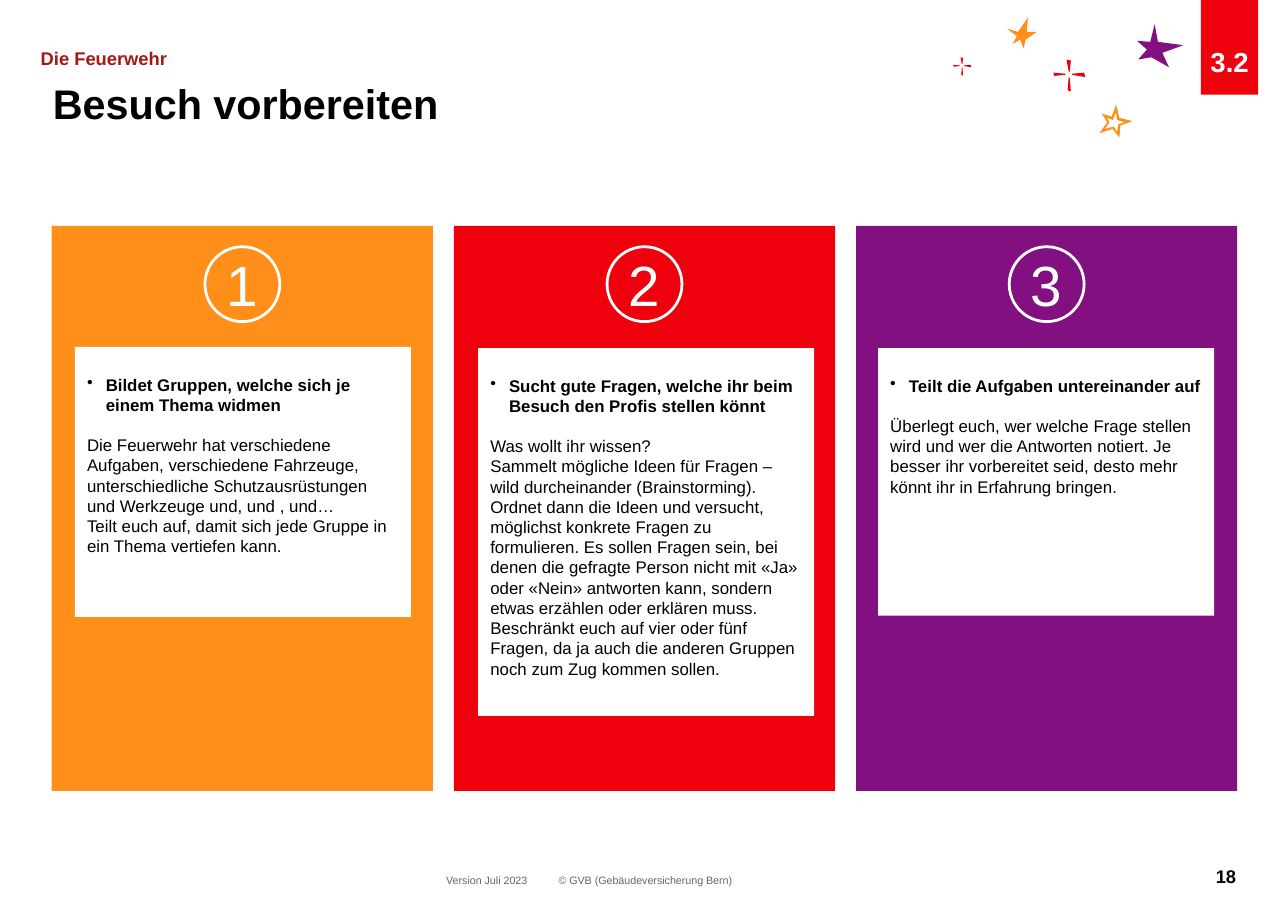
from dataclasses import dataclass

from lxml import etree
from pptx import Presentation
from pptx import util as u
from pptx.dml.color import RGBColor
from pptx.enum import shapes, text
from pptx.oxml import ns

PX = 9144


@dataclass(frozen=True)
class Theme:
    font: str = "Arial"
    gold: str = "FF8F18"
    red: str = "EE000C"
    plum: str = "831080"
    brick: str = "A61711"
    white: str = "FFFFFF"
    black: str = "000000"
    grey: str = "666666"
    foot: int = 7
    body: int = 11
    label: int = 12
    tab: int = 18
    title: int = 27
    digit: int = 37


T = Theme()

CARDS = [
    (T.gold, (21, 315, 305, 245), "Bildet Gruppen, welche sich je einem Thema widmen", [
        "Die Feuerwehr hat verschiedene Aufgaben, verschiedene Fahrzeuge, "
        "unterschiedliche Schutzausrüstungen und Werkzeuge und, und , und…",
        "Teilt euch auf, damit sich jede Gruppe in ein Thema vertiefen kann.",
    ]),
    (T.red, (22, 316, 305, 334), "Sucht gute Fragen, welche ihr beim Besuch den Profis stellen könnt", [
        "Was wollt ihr wissen?",
        "Sammelt mögliche Ideen für Fragen – wild durcheinander (Brainstorming).",
        "Ordnet dann die Ideen und versucht, möglichst konkrete Fragen zu formulieren. "
        "Es sollen Fragen sein, bei denen die gefragte Person nicht mit «Ja» oder «Nein» "
        "antworten kann, sondern etwas erzählen oder erklären muss. Beschränkt euch auf "
        "vier oder fünf Fragen, da ja auch die anderen Gruppen noch zum Zug kommen sollen.",
    ]),
    (T.plum, (20, 316, 305, 243), "Teilt die Aufgaben untereinander auf", [
        "Überlegt euch, wer welche Frage stellen wird und wer die Antworten notiert. "
        "Je besser ihr vorbereitet seid, desto mehr könnt ihr in Erfahrung bringen.",
    ]),
]

STARS = [
    (T.plum, [[(1044, 38), (1032, 37), (1041, 45), (1033, 54), (1045, 52),
               (1061, 61), (1055, 48), (1074, 41), (1051, 38), (1048, 22)]]),
    (T.gold, [[(919, 40), (926, 36), (929, 44), (931, 36), (941, 29),
               (932, 29), (933, 16), (924, 29), (914, 26), (923, 33)]]),
    (T.gold, [[(1016, 125), (1010, 117), (998, 121), (1005, 111), (1000, 103),
               (1009, 106), (1013, 95), (1016, 107), (1028, 110), (1017, 114)],
              [(1011, 115), (1014, 120), (1015, 113), (1021, 111), (1014, 109),
               (1013, 102), (1010, 109), (1005, 107), (1007, 111), (1003, 117)]]),
]

RAYS = [
    [(0, -3), (-2, -14), (2, -13), (1, -3)],
    [(1, 3), (2, 15), (-1, 14), (0, 2)],
    [(3, -1), (14, -2), (15, 2), (3, 0)],
    [(-3, 0), (-13, 1), (-14, -2), (-3, -1)],
]


def paint(shape, fill=None, line=None):
    shape.shadow.inherit = False
    if fill:
        shape.fill.solid()
        shape.fill.fore_color.rgb = RGBColor.from_string(fill)
    else:
        shape.fill.background()
    if line:
        shape.line.color.rgb = RGBColor.from_string(line)
        shape.line.width = u.Pt(1.8)
    else:
        shape.line.fill.background()
    return shape


def form(slide, box, kind=shapes.MSO_SHAPE.RECTANGLE, **look):
    return paint(slide.shapes.add_shape(kind, *(n * PX for n in box)), **look)


def field(slide, box):
    return slide.shapes.add_textbox(*(n * PX for n in box))


def outline(slide, loops, fill):
    loops = [[(x * PX, y * PX) for x, y in loop] for loop in loops]
    pen = slide.shapes.build_freeform(*loops[0][0])
    for loop in loops:
        if loop is not loops[0]:
            pen.move_to(*loop[0])
        pen.add_line_segments(loop[1:], close=True)
    paint(pen.convert_to_shape(), fill=fill)


def spark(slide, x, y, size):
    for ray in RAYS:
        outline(slide, [[(x + size * a, y + size * b) for a, b in ray]], T.red)


def frame(shape, inset=(0, 0, 0, 0), anchor=text.MSO_ANCHOR.TOP):
    area = shape.text_frame
    area.word_wrap = True
    area.vertical_anchor = anchor
    area.margin_left, area.margin_top, area.margin_right, area.margin_bottom = (
        n * PX for n in inset)
    return area


def write(area, words, size=T.body, color=T.black, bold=False,
          align=text.PP_ALIGN.LEFT, bullet=False, gap=0, lead=None):
    para = area.paragraphs[0]
    if para.runs:
        para = area.add_paragraph()
    if bullet:
        props = para._p.get_or_add_pPr()
        props.set("marL", str(17 * PX))
        props.set("indent", str(-17 * PX))
        etree.SubElement(props, ns.qn("a:buChar")).set("char", "•")
    para.alignment = align
    if gap:
        para.space_after = u.Pt(gap)
    if lead:
        para.line_spacing = lead
    run = para.add_run()
    run.text = words
    run.font.name = T.font
    run.font.size = u.Pt(size)
    run.font.bold = bold
    run.font.color.rgb = RGBColor.from_string(color)


def card(slide, index, fill, panel, head, lines):
    left = 47 + 365 * index
    form(slide, (left, 205, 346, 513), fill=fill)
    ring = form(slide, (left + 139, 224, 68, 68), shapes.MSO_SHAPE.OVAL, line=T.white)
    write(frame(ring, (0, 0, 0, 1), text.MSO_ANCHOR.MIDDLE), str(index + 1),
          size=T.digit, color=T.white, align=text.PP_ALIGN.CENTER)
    shift, *rest = panel
    area = frame(form(slide, (left + shift, *rest), fill=T.white), (11, 25, 11, 7))
    write(area, head, bold=True, bullet=True, gap=13)
    for line in lines:
        write(area, line)


def main():
    deck = Presentation()
    deck.slide_width, deck.slide_height = 1169 * PX, 827 * PX
    slide = deck.slides.add_slide(deck.slide_layouts[6])

    for fill, loops in STARS:
        outline(slide, loops, fill)
    spark(slide, 970, 68, 1)
    spark(slide, 873, 60, 0.57)

    write(frame(field(slide, (37, 47, 807, 21))), "Die Feuerwehr",
          size=T.label, color=T.brick, bold=True, lead=0.8)
    write(frame(field(slide, (48, 71, 886, 58))), "Besuch vorbereiten",
          size=T.title, bold=True)
    tab = form(slide, (1090, 0, 52, 86), fill=T.red)
    write(frame(tab, (0, 40, 0, 15), text.MSO_ANCHOR.BOTTOM), "3.2",
          size=T.tab, color=T.white, bold=True, align=text.PP_ALIGN.CENTER)

    for index, parts in enumerate(CARDS):
        card(slide, index, *parts)

    for box, words in [((405, 793, 85, 13), "Version Juli 2023"),
                       ((507, 793, 170, 12), "© GVB (Gebäudeversicherung Bern)")]:
        write(frame(field(slide, box)), words, size=T.foot, color=T.grey)
    write(frame(field(slide, (1051, 785, 71, 17))), "18",
          size=T.label, bold=True, align=text.PP_ALIGN.RIGHT)

    deck.save("out.pptx")


if __name__ == "__main__":
    main()
